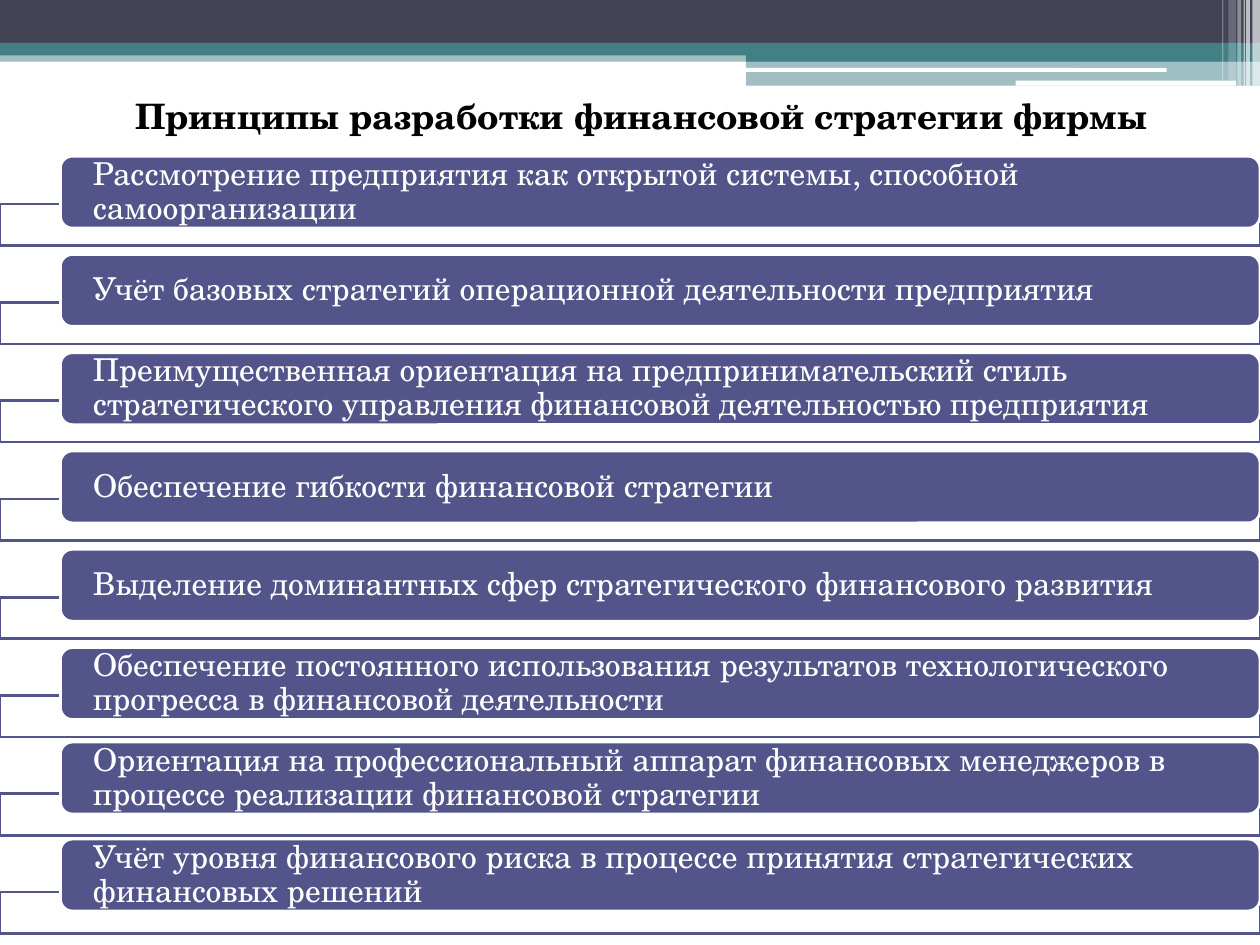
from lxml import etree
from pptx import Presentation
from pptx.dml.color import RGBColor as Rgb
from pptx.enum.shapes import MSO_SHAPE as Geom
from pptx.enum.text import MSO_ANCHOR as Anchor, PP_ALIGN as Align
from pptx.oxml.ns import qn
from pptx.util import Inches, Pt

FONT = "TeX Gyre Schola"
HEX = {"dark": "424456", "teal": "438086", "plum": "53548A",
       "white": "FFFFFF", "black": "000000"}

TITLE = "Принципы разработки финансовой стратегии фирмы"
RULES = [
    "Рассмотрение предприятия как открытой системы, способной самоорганизации",
    "Учёт базовых стратегий операционной деятельности предприятия",
    "Преимущественная ориентация на предпринимательский стиль "
    "стратегического управления финансовой деятельностью предприятия",
    "Обеспечение гибкости финансовой стратегии",
    "Выделение доминантных сфер стратегического финансового развития",
    "Обеспечение постоянного использования результатов технологического "
    "прогресса в финансовой деятельности",
    "Ориентация на профессиональный аппарат финансовых менеджеров "
    "в процессе реализации финансовой стратегии",
    "Учёт уровня финансового риска в процессе принятия стратегических "
    "финансовых решений",
]
STEP = 0.78
LIFT = {6: 0.03, 7: 0.04}  # the last two pills sit a little higher


def color(name):
    return Rgb.from_string(HEX[name])


def add_box(slide, box, fill, alpha=100, line=None, geom=Geom.RECTANGLE):
    """Add a filled shape; alpha is its opacity in percent."""
    shape = slide.shapes.add_shape(geom, *map(Inches, box))
    shape.shadow.inherit = False
    shape.fill.solid()
    shape.fill.fore_color.rgb = color(fill)
    if alpha < 100:
        tone = shape.fill._xPr.find(qn("a:solidFill"))[0]
        etree.SubElement(tone, qn("a:alpha"), val=str(alpha * 1000))
    if line:
        shape.line.color.rgb = color(line)
        shape.line.width = Pt(1.5)
    else:
        shape.line.fill.background()
    return shape


def add_run(para, text, size, tint, bold=False):
    run = para.add_run()
    run.text = text
    font = run.font
    font.name, font.size, font.bold = FONT, Pt(size), bold
    font.color.rgb = color(tint)


def add_head(slide, box):
    """Draw the layered bands and the thin stripes at the right end."""
    left, top, width, height = box
    right, base = left + width, top + height
    add_box(slide, (left, top + 0.4, width, 0.09), "teal", 50)
    add_box(slide, (left, top, width, 0.34), "dark")
    add_box(slide, (left, top + 0.34, width, 0.1), "teal")
    add_box(slide, (right - 4.08, top + 0.39, 4.08, 0.1), "teal")
    add_box(slide, (right - 4.08, base - 0.2, 4.08, 0.2), "teal", 50)
    for x, y, w, h in [(5.91, 0.54, 3.35, 0.03), (8.06, 0.64, 1.75, 0.04)]:
        add_box(slide, (left + x, top + y, w, h), "white",
                geom=Geom.ROUNDED_RECTANGLE)
    stripes = [(0.06, 0.06, 0, 65), (0.11, 0.03, 0, 65), (0.13, 0.01, 0, 60),
               (0.18, 0.03, 0, 40), (0.25, 0.06, 0.04, 20),
               (0.3, 0.01, 0.04, 30)]
    for back, w, cut, alpha in stripes:
        add_box(slide, (right - back, top, w, height - cut), "white", alpha)


def set_title(slide, box):
    title = slide.shapes.title
    title.left, title.top, title.width, title.height = map(Inches, box)
    frame = title.text_frame
    frame.word_wrap = True
    frame.vertical_anchor = Anchor.MIDDLE
    para = frame.paragraphs[0]
    para.alignment = Align.CENTER
    add_run(para, TITLE, 20, "black", bold=True)


def add_rule(slide, box, text, lift=0):
    """Draw one principle: an outlined strip with a pill over it."""
    left, top, width, height = box
    add_box(slide, (left, top + 0.38, width, height - 0.38), "white", 90,
            "plum")
    pill = add_box(slide, (left + 0.48, top - lift, width - 0.48, 0.57),
                   "plum", line="white", geom=Geom.ROUNDED_RECTANGLE)
    frame = pill.text_frame
    frame.word_wrap = True
    frame.vertical_anchor = Anchor.MIDDLE
    frame.margin_left = frame.margin_right = Inches(0.23)
    frame.margin_top = frame.margin_bottom = 0
    para = frame.paragraphs[0]
    para.alignment = Align.LEFT
    para.line_spacing = 0.9
    add_run(para, text, 18, "white")


def add_list(slide, box):
    left, top, width, height = box
    for i, text in enumerate(RULES):
        row = (left, top + i * STEP, width, height - STEP * (len(RULES) - 1))
        add_rule(slide, row, text, LIFT.get(i, 0))


def main():
    deck = Presentation()
    deck.slide_width, deck.slide_height = Inches(10), Inches(7.5)
    slide = deck.slides.add_slide(deck.slide_layouts[5])
    add_head(slide, (0, 0, 10, 0.68))
    set_title(slide, (0.59, 0.52, 9, 0.79))
    add_list(slide, (0, 1.24, 10, 6.17))
    deck.save("out.pptx")


if __name__ == "__main__":
    main()
